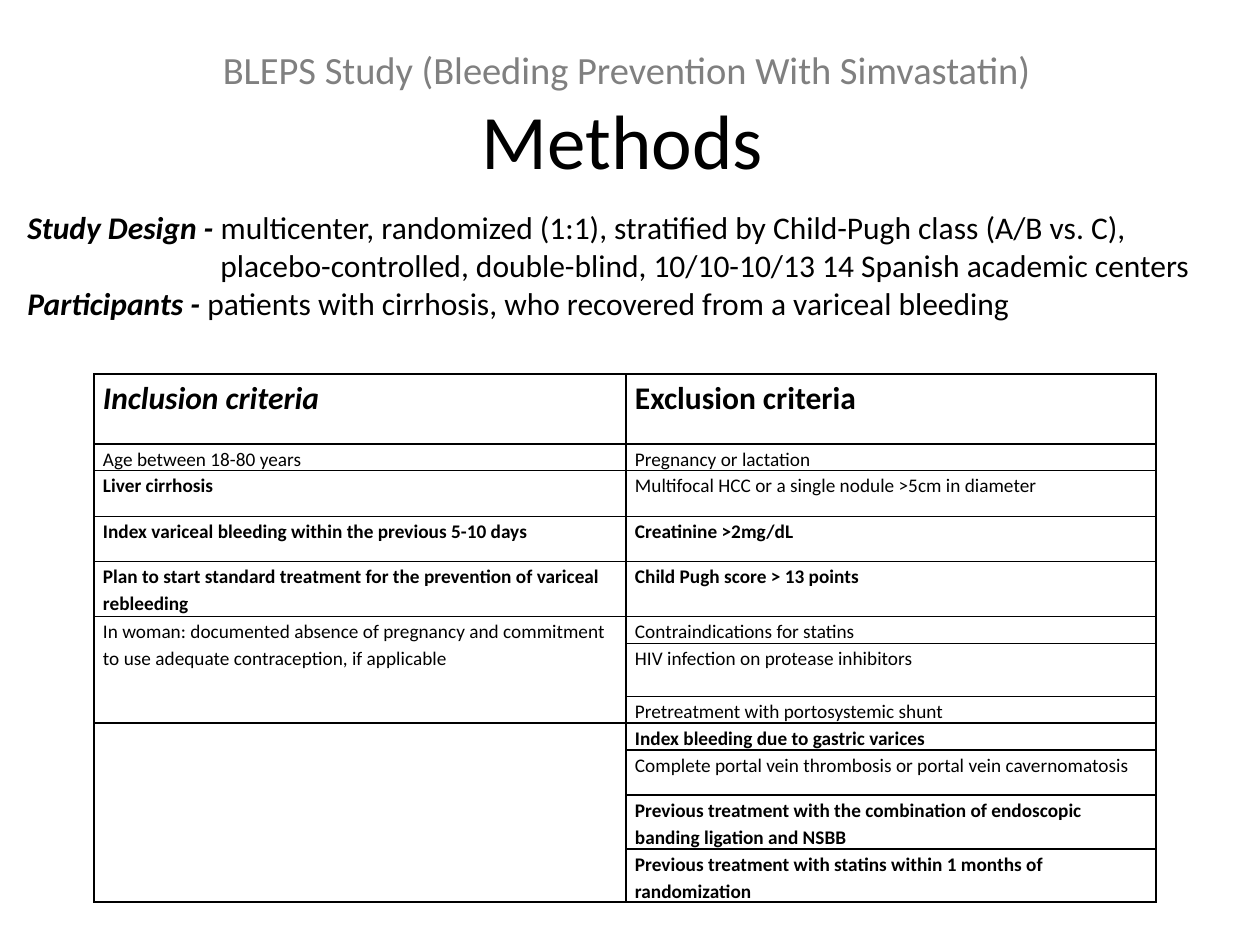
from dataclasses import dataclass

from lxml import etree
from pptx import Presentation
from pptx.dml.color import RGBColor
from pptx.enum.text import MSO_ANCHOR, PP_ALIGN
from pptx.oxml.ns import qn
from pptx.util import Emu, Pt

CENTER = PP_ALIGN.CENTER
MIDDLE = MSO_ANCHOR.MIDDLE
PIXELS_PER_INCH = 126


@dataclass(frozen=True)
class Theme:
    font: str = "Calibri"
    text: str = "000000"
    muted: str = "808080"
    title_size: int = 44
    subtitle_size: int = 22
    body_size: int = 18
    cell_size: int = 11
    cell_line_spacing: float = 1.15
    border_width: int = 1


THEME = Theme()

# (text, bold, italic)
STUDY_LINES = [
    [("Study Design - ", True, True),
     ("multicenter, randomized (1:1), stratified by Child-Pugh class (A/B vs. C),", False, False)],
    [("placebo-controlled, double-blind, 10/10-10/13 14 Spanish academic centers", False, False)],
    [("Participants - ", True, True),
     ("patients with cirrhosis, who recovered from a variceal bleeding", False, False)],
]
CONTINUATION_LINE = 1
CONTINUATION_INDENT = 193

HEADINGS = [("Inclusion criteria", True), ("Exclusion criteria", False)]
# (text, bold, rows spanned)
INCLUSION = [
    ("Age between 18-80 years", False, 1),
    ("Liver cirrhosis", True, 1),
    ("Index variceal bleeding within the previous 5-10 days", True, 1),
    ("Plan to start standard treatment for the prevention of variceal rebleeding", True, 1),
    ("In woman: documented absence of pregnancy and commitment to use adequate "
     "contraception, if applicable", False, 3),
    ("", False, 4),
]
EXCLUSION = [
    ("Pregnancy or lactation", False, 1),
    ("Multifocal HCC or a single nodule >5cm in diameter", False, 1),
    ("Creatinine >2mg/dL", True, 1),
    ("Child Pugh score > 13 points", True, 1),
    ("Contraindications for statins", False, 1),
    ("HIV infection on protease inhibitors", False, 1),
    ("Pretreatment with portosystemic shunt", False, 1),
    ("Index bleeding due to gastric varices", True, 1),
    ("Complete portal vein thrombosis or portal vein cavernomatosis", False, 1),
    ("Previous treatment with the combination of endoscopic banding ligation and NSBB", True, 1),
    ("Previous treatment with statins within 1 months of randomization", True, 1),
]
COLUMN_WIDTHS = [532, 530]
ROW_HEIGHTS = [70, 26, 46, 45, 55, 27, 53, 26, 27, 45, 54, 53]
CELL_MARGIN = 9


def px(length):
    return Emu(round(length * 914400 / PIXELS_PER_INCH))


def add_run(paragraph, text, size, color=THEME.text, bold=False, italic=False):
    run = paragraph.add_run()
    run.text = text
    run.font.name = THEME.font
    run.font.size = Pt(size)
    run.font.color.rgb = RGBColor.from_string(color)
    run.font.bold = bold
    run.font.italic = italic


def add_text_frame(slide, box):
    text_frame = slide.shapes.add_textbox(*map(px, box)).text_frame
    text_frame.word_wrap = True
    return text_frame


def add_title(slide, box):
    text_frame = add_text_frame(slide, box)
    text_frame.vertical_anchor = MIDDLE
    paragraph = text_frame.paragraphs[0]
    paragraph.alignment = CENTER
    add_run(paragraph, "BLEPS Study (Bleeding Prevention With Simvastatin) ",
            THEME.subtitle_size, THEME.muted)
    paragraph.add_line_break()
    add_run(paragraph, "Methods ", THEME.title_size)


def add_study_summary(slide, box):
    text_frame = add_text_frame(slide, box)
    for index, line in enumerate(STUDY_LINES):
        paragraph = text_frame.add_paragraph() if index else text_frame.paragraphs[0]
        if index == CONTINUATION_LINE:
            paragraph._p.get_or_add_pPr().set("marL", str(px(CONTINUATION_INDENT)))
        for text, bold, italic in line:
            add_run(paragraph, text, THEME.body_size, bold=bold, italic=italic)


def style_cell(cell):
    """Give the cell its margins, black borders on all sides and no fill."""
    cell.margin_left = cell.margin_right = px(CELL_MARGIN)
    cell.margin_top = cell.margin_bottom = 0
    properties = cell._tc.get_or_add_tcPr()
    for side in ("a:lnL", "a:lnR", "a:lnT", "a:lnB"):
        line = etree.SubElement(properties, qn(side), w=str(Pt(THEME.border_width)))
        fill = etree.SubElement(line, qn("a:solidFill"))
        etree.SubElement(fill, qn("a:srgbClr"), val=THEME.text)
    cell.fill.background()


def write_cell(cell, text, size, bold, italic=False):
    paragraph = cell.text_frame.paragraphs[0]
    paragraph.line_spacing = THEME.cell_line_spacing
    if text:
        add_run(paragraph, text, size, bold=bold, italic=italic)


def add_criteria_table(slide, left, top):
    table = slide.shapes.add_table(
        len(ROW_HEIGHTS), len(COLUMN_WIDTHS), px(left), px(top),
        px(sum(COLUMN_WIDTHS)), px(sum(ROW_HEIGHTS))).table
    table.first_row = table.horz_banding = False
    for column, width in zip(table.columns, COLUMN_WIDTHS):
        column.width = px(width)
    for row, height in zip(table.rows, ROW_HEIGHTS):
        row.height = px(height)
    for cell in table.iter_cells():
        style_cell(cell)

    for column, criteria in enumerate((INCLUSION, EXCLUSION)):
        heading, italic = HEADINGS[column]
        write_cell(table.cell(0, column), heading, THEME.body_size, True, italic)
        row = 1
        for text, bold, span in criteria:
            cell = table.cell(row, column)
            if span > 1:
                cell.merge(table.cell(row + span - 1, column))
            write_cell(cell, text, THEME.cell_size, bold)
            row += span


def main():
    presentation = Presentation()
    presentation.slide_width = px(1260)
    presentation.slide_height = px(945)
    slide = presentation.slides.add_slide(presentation.slide_layouts[6])
    add_title(slide, (64, 37, 1134, 157))
    add_study_summary(slide, (15, 202, 1221, 165))
    add_criteria_table(slide, 94, 374)
    presentation.save("out.pptx")


if __name__ == "__main__":
    main()
